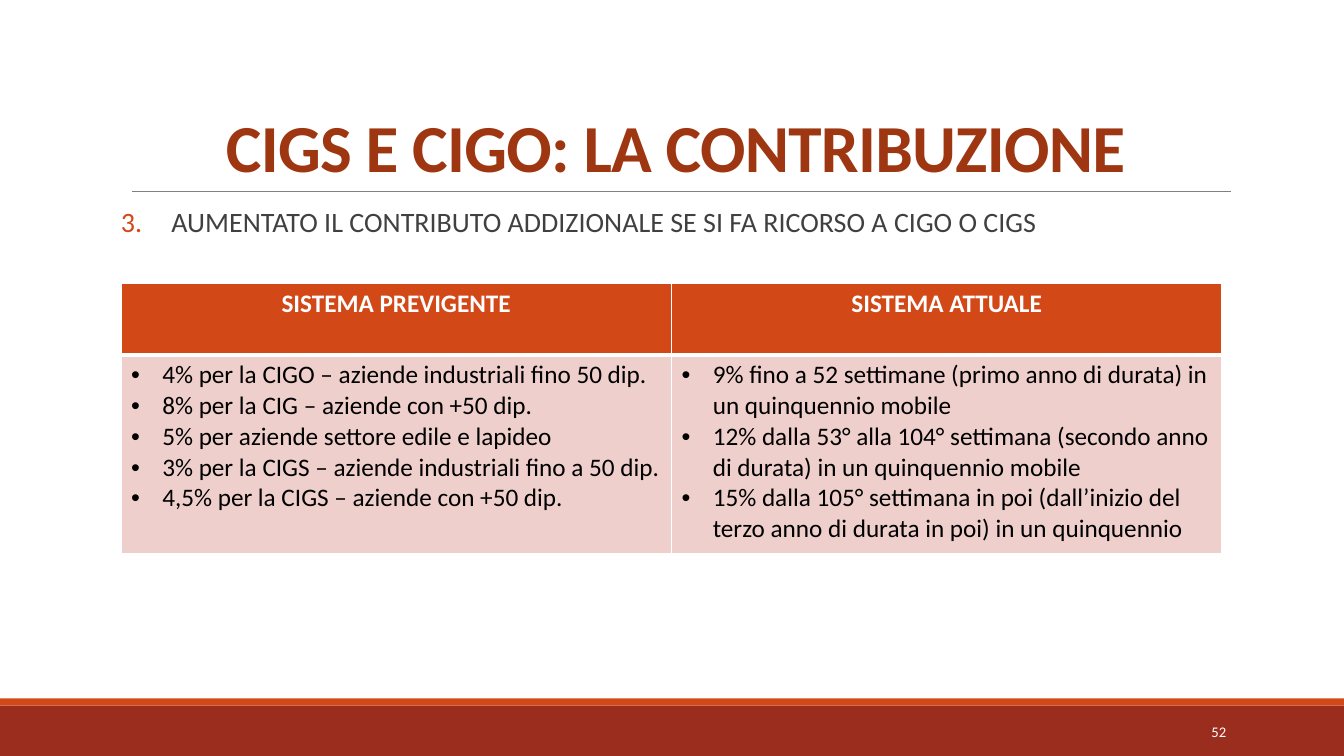
from dataclasses import dataclass

from lxml import etree
from pptx import Presentation
from pptx import util as u
from pptx.dml.color import RGBColor
from pptx.enum import shapes, text
from pptx.oxml import ns

EMU_PER_PX = 9144  # 100 px to the inch
FONT = "Calibri"
COLORS = {
    "brick": "9B2D1F",
    "orange": "D34817",
    "rust": "9E3611",
    "gray": "808080",
    "charcoal": "404040",
    "pink": "EFCFCC",
    "white": "FFFFFF",
    "black": "000000",
}


@dataclass(frozen=True)
class Box:
    left: int
    top: int
    width: int
    height: int

    def emu(self) -> tuple[int, int, int, int]:
        return px(self.left), px(self.top), px(self.width), px(self.height)


@dataclass(frozen=True)
class Band:
    box: Box
    color: str


@dataclass(frozen=True)
class Style:
    size: float
    color: str
    align: text.PP_ALIGN = text.PP_ALIGN.LEFT
    bold: bool = False


@dataclass(frozen=True)
class System:
    heading: str
    rates: tuple[str, ...]


BANDS = (
    Band(Box(0, 700, 1333, 50), "brick"),
    Band(Box(0, 693, 1333, 7), "orange"),
)
TITLE = Style(48, "rust", text.PP_ALIGN.CENTER, True)
POINT = Style(20, "charcoal", text.PP_ALIGN.JUSTIFY)
PAGE_NUMBER = Style(10.5, "white", text.PP_ALIGN.RIGHT)
HEADING = Style(18, "white", text.PP_ALIGN.CENTER, True)
RATE = Style(18, "black")
SYSTEMS = (
    System("SISTEMA PREVIGENTE", (
        "4% per la CIGO – aziende industriali fino 50 dip.",
        "8% per la CIG – aziende con +50 dip.",
        "5% per aziende settore edile e lapideo",
        "3% per la CIGS – aziende industriali fino a 50 dip.",
        "4,5% per la CIGS – aziende con +50 dip.",
    )),
    System("SISTEMA ATTUALE", (
        "9% fino a 52 settimane (primo anno di durata) in un quinquennio mobile",
        "12% dalla 53° alla 104° settimana (secondo anno di durata) in un quinquennio mobile",
        "15% dalla 105° settimana in poi (dall’inizio del terzo anno di durata in poi) "
        "in un quinquennio",
    )),
)
TABLE_BOX = Box(120, 281, 1092, 268)
ROW_HEIGHTS = (71, 197)


def px(length: int) -> int:
    return length * EMU_PER_PX


def rgb(name: str) -> RGBColor:
    return RGBColor.from_string(COLORS[name])


def add_child(parent, tag: str, **attributes: str):
    return etree.SubElement(parent, ns.qn(tag), attributes)


def write(paragraph, words: str, style: Style) -> None:
    paragraph.text = words
    paragraph.alignment = style.align
    font = paragraph.font
    font.name, font.size, font.bold = FONT, u.Pt(style.size), style.bold
    font.color.rgb = rgb(style.color)


def hang(paragraph, indent: int):
    """Give the paragraph a hanging indent and return its properties."""
    properties = paragraph._p.get_or_add_pPr()
    properties.set("marL", str(px(indent)))
    properties.set("indent", str(-px(indent)))
    return properties


def add_band(slide, band: Band) -> None:
    shape = slide.shapes.add_shape(shapes.MSO_SHAPE.RECTANGLE, *band.box.emu())
    shape.shadow.inherit = False
    shape.fill.solid()
    shape.fill.fore_color.rgb = rgb(band.color)
    shape.line.fill.background()


def add_title_rule(slide) -> None:
    rule = slide.shapes.add_connector(
        shapes.MSO_CONNECTOR.STRAIGHT, px(131), px(190), px(1221), px(190))
    rule.line.color.rgb = rgb("gray")
    rule.line.width = u.Pt(0.5)
    add_child(rule._element.spPr, "a:effectLst")


def add_text(slide, box: Box, anchor: text.MSO_ANCHOR):
    frame = slide.shapes.add_textbox(*box.emu()).text_frame
    frame.word_wrap = True
    frame.vertical_anchor = anchor
    return frame


def add_title(slide) -> None:
    frame = add_text(slide, Box(120, 31, 1100, 159), text.MSO_ANCHOR.BOTTOM)
    paragraph = frame.paragraphs[0]
    write(paragraph, "CIGS E CIGO: LA CONTRIBUZIONE", TITLE)
    paragraph.line_spacing = 0.85
    paragraph.font._element.set("spc", "-50")


def add_numbered_point(slide) -> None:
    frame = add_text(slide, Box(120, 202, 1100, 440), text.MSO_ANCHOR.TOP)
    frame.margin_left = frame.margin_right = 0
    paragraph = frame.paragraphs[0]
    paragraph.line_spacing = 0.9
    paragraph.space_before, paragraph.space_after = u.Pt(12), u.Pt(2)
    properties = hang(paragraph, 50)
    bullet_color = add_child(properties, "a:buClr")
    add_child(bullet_color, "a:srgbClr", val=COLORS["orange"])
    add_child(properties, "a:buFont", typeface="+mj-lt")
    add_child(properties, "a:buAutoNum", type="arabicPeriod", startAt="3")
    write(paragraph, "AUMENTATO IL CONTRIBUTO ADDIZIONALE SE SI FA RICORSO A CIGO O CIGS", POINT)


def paint_cell(cell, fill: str, top: int, bottom: int) -> None:
    """Fill the cell and edge it in white; top and bottom are in points."""
    properties = cell._tc.get_or_add_tcPr()
    for side, width in (("L", 1), ("R", 1), ("T", top), ("B", bottom)):
        edge = add_child(properties, f"a:ln{side}", w=str(u.Pt(width)))
        add_child(add_child(edge, "a:solidFill"), "a:srgbClr", val=COLORS["white"])
    cell.fill.solid()
    cell.fill.fore_color.rgb = rgb(fill)


def add_systems_table(slide) -> None:
    table = slide.shapes.add_table(2, len(SYSTEMS), *TABLE_BOX.emu()).table
    table.horz_banding = False
    for row, height in zip(table.rows, ROW_HEIGHTS):
        row.height = px(height)
    for column, system in enumerate(SYSTEMS):
        heading, rates = table.cell(0, column), table.cell(1, column)
        paint_cell(heading, "orange", 1, 3)
        paint_cell(rates, "pink", 3, 1)
        write(heading.text_frame.paragraphs[0], system.heading, HEADING)
        for index, rate in enumerate(system.rates):
            frame = rates.text_frame
            paragraph = frame.add_paragraph() if index else frame.paragraphs[0]
            properties = hang(paragraph, 31)
            add_child(properties, "a:buFont", typeface="Arial")
            add_child(properties, "a:buChar", char="•")
            write(paragraph, rate, RATE)


def main() -> None:
    presentation = Presentation()
    presentation.slide_width, presentation.slide_height = px(1333), px(750)
    slide = presentation.slides.add_slide(presentation.slide_layouts[6])
    for band in BANDS:
        add_band(slide, band)
    add_title_rule(slide)
    add_title(slide)
    add_numbered_point(slide)
    page_number = add_text(slide, Box(1083, 706, 143, 40), text.MSO_ANCHOR.MIDDLE)
    write(page_number.paragraphs[0], "52", PAGE_NUMBER)
    add_systems_table(slide)
    presentation.save("out.pptx")


if __name__ == "__main__":
    main()
